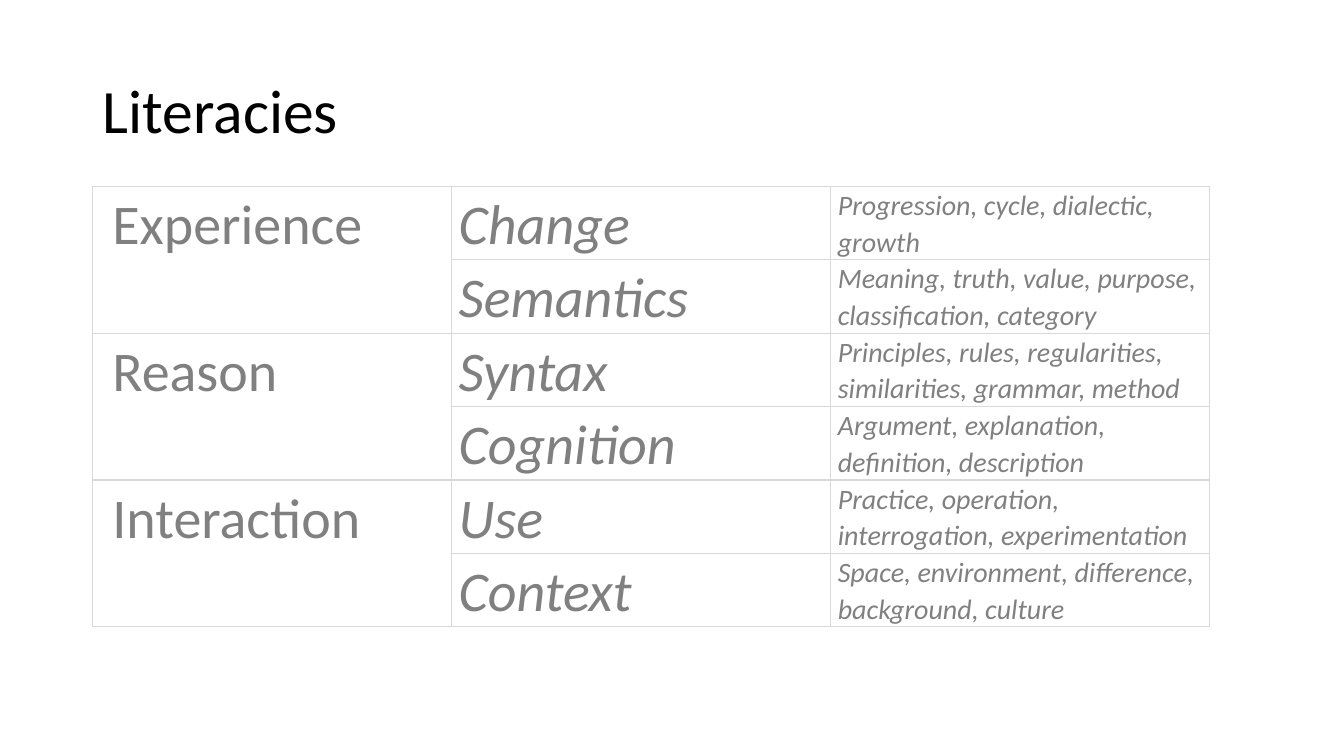
from dataclasses import dataclass

from pptx import Presentation
from pptx import util as u
from pptx.dml.color import RGBColor
from pptx.enum import text
from pptx.oxml import parse_xml
from pptx.oxml.ns import nsdecls

PX = 9144  # 100 px to the inch


@dataclass(frozen=True)
class Theme:
    font: str = "Calibri"
    title_color: str = "000000"
    body_color: str = "808080"
    border_color: str = "D9D9D9"
    title_size: int = 44
    term_size: int = 40
    detail_size: int = 20


THEME = Theme()

LITERACIES = [
    (" Experience", [
        ("Change", "Progression, cycle, dialectic, growth"),
        ("Semantics", "Meaning, truth, value, purpose, classification, category"),
    ]),
    (" Reason", [
        ("Syntax ", "Principles, rules, regularities, similarities, grammar, method"),
        ("Cognition", "Argument, explanation, definition, description"),
    ]),
    (" Interaction", [
        ("Use", "Practice, operation, interrogation, experimentation"),
        ("Context", "Space, environment, difference, background, culture"),
    ]),
]

COLUMN_WIDTHS = (356, 376, 376)
ROW_HEIGHT = 71


def px(length):
    return u.Emu(length * PX)


def add_run(paragraph, words, size, color, italic=False):
    run = paragraph.add_run()
    run.text = words
    run.font.name = THEME.font
    run.font.size = u.Pt(size)
    run.font.italic = italic
    run.font.color.rgb = RGBColor.from_string(color)


def set_title(slide, words):
    title = slide.shapes.title
    title.left, title.top, title.width, title.height = map(px, (92, 40, 1150, 145))
    frame = title.text_frame
    frame.word_wrap = True
    frame.auto_size = text.MSO_AUTO_SIZE.NONE
    frame.vertical_anchor = text.MSO_ANCHOR.MIDDLE
    heading = frame.paragraphs[0]
    heading.alignment = text.PP_ALIGN.LEFT
    heading.line_spacing = 0.9
    add_run(heading, words, THEME.title_size, THEME.title_color)


def style_cell(cell):
    """Give the cell thin grey borders, no fill and narrow side margins."""
    properties = cell._tc.get_or_add_tcPr()
    for side in ("lnL", "lnR", "lnT", "lnB"):
        properties.append(parse_xml(
            f'<a:{side} {nsdecls("a")} w="{u.Pt(1)}"><a:solidFill>'
            f'<a:srgbClr val="{THEME.border_color}"/></a:solidFill></a:{side}>'))
    cell.fill.background()
    cell.margin_left = cell.margin_right = px(7)
    cell.margin_top = cell.margin_bottom = 0
    cell.vertical_anchor = text.MSO_ANCHOR.TOP


def write_cell(cell, words, size, italic=True):
    paragraph = cell.text_frame.paragraphs[0]
    paragraph.line_spacing = 1.07
    add_run(paragraph, words, size, THEME.body_color, italic)


def add_literacy_table(slide, groups):
    row_count = sum(len(terms) for _, terms in groups)
    table = slide.shapes.add_table(
        row_count, len(COLUMN_WIDTHS), px(92), px(185),
        px(sum(COLUMN_WIDTHS)), px(row_count * ROW_HEIGHT)).table
    table.first_row = table.horz_banding = False
    for column, width in zip(table.columns, COLUMN_WIDTHS):
        column.width = px(width)
    for cell in table.iter_cells():
        style_cell(cell)

    row = 0
    for group, terms in groups:
        group_cell = table.cell(row, 0)
        group_cell.merge(table.cell(row + len(terms) - 1, 0))
        write_cell(group_cell, group, THEME.term_size, italic=False)
        for term, detail in terms:
            write_cell(table.cell(row, 1), term, THEME.term_size)
            write_cell(table.cell(row, 2), detail, THEME.detail_size)
            row += 1


def main():
    deck = Presentation()
    deck.slide_width, deck.slide_height = px(1333), px(750)
    slide = deck.slides.add_slide(deck.slide_layouts[5])
    set_title(slide, "Literacies")
    add_literacy_table(slide, LITERACIES)
    deck.save("out.pptx")


if __name__ == "__main__":
    main()
